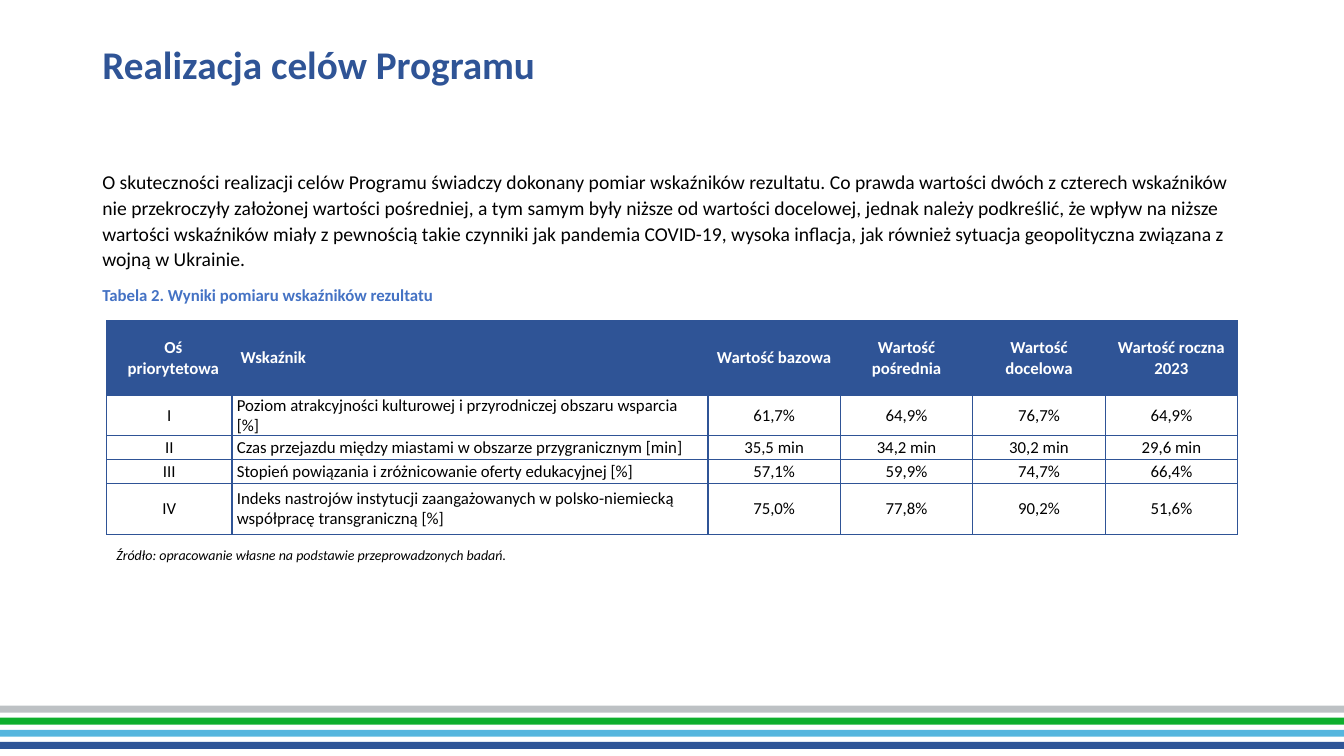
from lxml.etree import SubElement
from pptx import Presentation
from pptx.dml.color import RGBColor
from pptx.enum.shapes import MSO_SHAPE
from pptx.enum.text import MSO_ANCHOR, MSO_AUTO_SIZE, PP_ALIGN
from pptx.oxml.ns import qn
from pptx.util import Pt

INK = {"navy": "2F5496", "blue": "4472C4", "black": "000000", "white": "FFFFFF",
       "grey": "BDC1C4", "green": "0EAF2D", "sky": "56B6DE", "base": "2F5597"}
HEAD = ["Oś priorytetowa", " Wskaźnik", "Wartość bazowa", "Wartość pośrednia",
        "Wartość docelowa", "Wartość roczna 2023"]
ROWS = [
    ["I", "Poziom atrakcyjności kulturowej i przyrodniczej obszaru wsparcia [%]",
     "61,7%", "64,9%", "76,7%", "64,9%"],
    ["II", "Czas przejazdu między miastami w obszarze przygranicznym [min]",
     "35,5 min", "34,2 min", "30,2 min", "29,6 min"],
    ["III", "Stopień powiązania i zróżnicowanie oferty edukacyjnej [%]",
     "57,1%", "59,9%", "74,7%", "66,4%"],
    ["IV", "Indeks nastrojów instytucji zaangażowanych w polsko-niemiecką "
           "współpracę transgraniczną [%]",
     "75,0%", "77,8%", "90,2%", "51,6%"],
]
BODY = ("O skuteczności realizacji celów Programu świadczy dokonany pomiar wskaźników "
        "rezultatu. Co prawda wartości dwóch z czterech wskaźników nie przekroczyły "
        "założonej wartości pośredniej, a tym samym były niższe od wartości docelowej, "
        "jednak należy podkreślić, że wpływ na niższe wartości wskaźników miały z pewnością "
        "takie czynniki jak pandemia COVID-19, wysoka inflacja, jak również sytuacja "
        "geopolityczna związana z wojną w Ukrainie.")


def tint(name):
    return RGBColor.from_string(INK[name])


def apply(item, form):
    for key, value in form.items():
        setattr(item, key, value)


class Deck:
    face = "Calibri"

    def __init__(self, wide, high):
        self.show = Presentation()
        apply(self.show, {"slide_width": Pt(wide), "slide_height": Pt(high)})
        self.slide = self.show.slides.add_slide(self.show.slide_layouts[5])

    def label(self, frame, text, size, ink, para=None, **form):
        line = frame.paragraphs[0]
        line.text = text
        apply(line, para or {})
        apply(line.font, {"name": self.face, "size": Pt(size), **form})
        line.font.color.rgb = tint(ink)
        return line

    def title(self, text, box):
        shape = self.slide.shapes.title
        apply(shape, dict(zip(("left", "top", "width", "height"), map(Pt, box))))
        apply(shape.text_frame, {"word_wrap": True, "auto_size": MSO_AUTO_SIZE.NONE,
                                 "vertical_anchor": MSO_ANCHOR.MIDDLE})
        self.label(shape.text_frame, text, 28, "navy",
                   {"alignment": PP_ALIGN.LEFT, "line_spacing": 0.9}, bold=True)

    def text(self, text, box, size, ink, para, fit=MSO_AUTO_SIZE.SHAPE_TO_FIT_TEXT, **form):
        frame = self.slide.shapes.add_textbox(*map(Pt, box)).text_frame
        apply(frame, {"word_wrap": True, "auto_size": fit})
        self.label(frame, text, size, ink, para, **form)

    def band(self, box, ink):
        shape = self.slide.shapes.add_shape(MSO_SHAPE.RECTANGLE, *map(Pt, box))
        shape.shadow.inherit = False
        shape.fill.solid()
        shape.fill.fore_color.rgb = tint(ink)
        shape.line.fill.background()

    def edge(self, cell, ink):
        prop = cell._tc.get_or_add_tcPr()
        for spot, side in enumerate(("lnL", "lnR", "lnT", "lnB")):
            line = SubElement(prop, qn("a:" + side), w=str(Pt(1)))
            prop.insert(spot, line)
            fill = SubElement(line, qn("a:solidFill"))
            SubElement(fill, qn("a:srgbClr"), val=INK[ink])

    def cell(self, cell, text, head, mid):
        apply(cell, {"margin_left": Pt(3.5), "margin_right": Pt(3.5), "margin_top": 0,
                     "margin_bottom": 0, "vertical_anchor": MSO_ANCHOR.MIDDLE})
        if head:
            cell.fill.solid()
            cell.fill.fore_color.rgb = tint("navy")
        else:
            cell.fill.background()
        self.edge(cell, "navy")
        align = PP_ALIGN.CENTER if mid else PP_ALIGN.LEFT
        return self.label(cell.text_frame, text, 12, "white" if head else "black",
                          {"alignment": align}, bold=head)

    def table(self, data, left, top, cols, rows):
        box = map(Pt, (left, top, sum(cols), sum(rows)))
        grid = self.slide.shapes.add_table(len(rows), len(cols), *box).table
        apply(grid, {"first_row": True, "horz_banding": False})
        for col, wide in zip(grid.columns, cols):
            col.width = Pt(wide)
        for r, high in enumerate(rows):
            grid.rows[r].height = Pt(high)
            for c, text in enumerate(data[r]):
                line = self.cell(grid.cell(r, c), text, r == 0, c != 1)
                if r == c == 0:
                    line._p.get_or_add_pPr().set("marL", str(Pt(5.7)))


def main():
    deck = Deck(960, 540)
    for i, ink in enumerate(("grey", "green", "sky", "base")):
        deck.band((0, 504 + 8.65 * i, 960, 5), ink)
    deck.text("Źródło: opracowanie własne na podstawie przeprowadzonych badań.",
              (76, 386.5, 479.5, 19.4), 10, "black", {"space_after": Pt(8)}, italic=True)
    deck.table([HEAD] + ROWS, 76.2, 229, [89.5, 340] + [94.6] * 4,
               [53.5] + [17.1] * 3 + [36])
    deck.text("Tabela 2. Wyniki pomiaru wskaźników rezultatu",
              (66, 199.5, 479.5, 21.8), 12, "blue", {"space_after": Pt(10)}, bold=True)
    deck.text(BODY, (66, 116, 828, 370), 14, "black", {"line_spacing": 1.1},
              MSO_AUTO_SIZE.NONE)
    deck.title("Realizacja celów Programu", (66, 24.5, 828, 46.8))
    deck.show.save("out.pptx")


if __name__ == "__main__":
    main()
